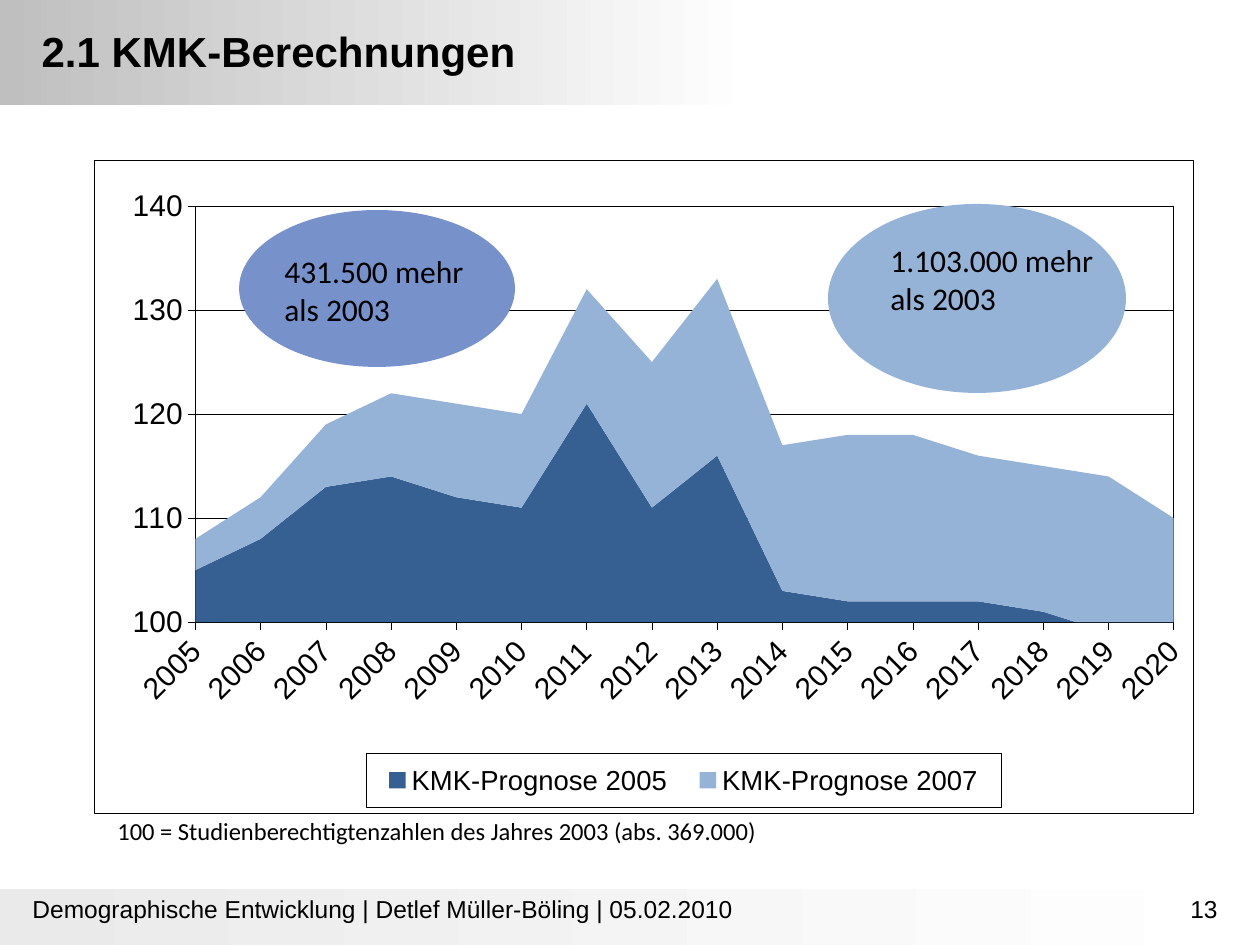
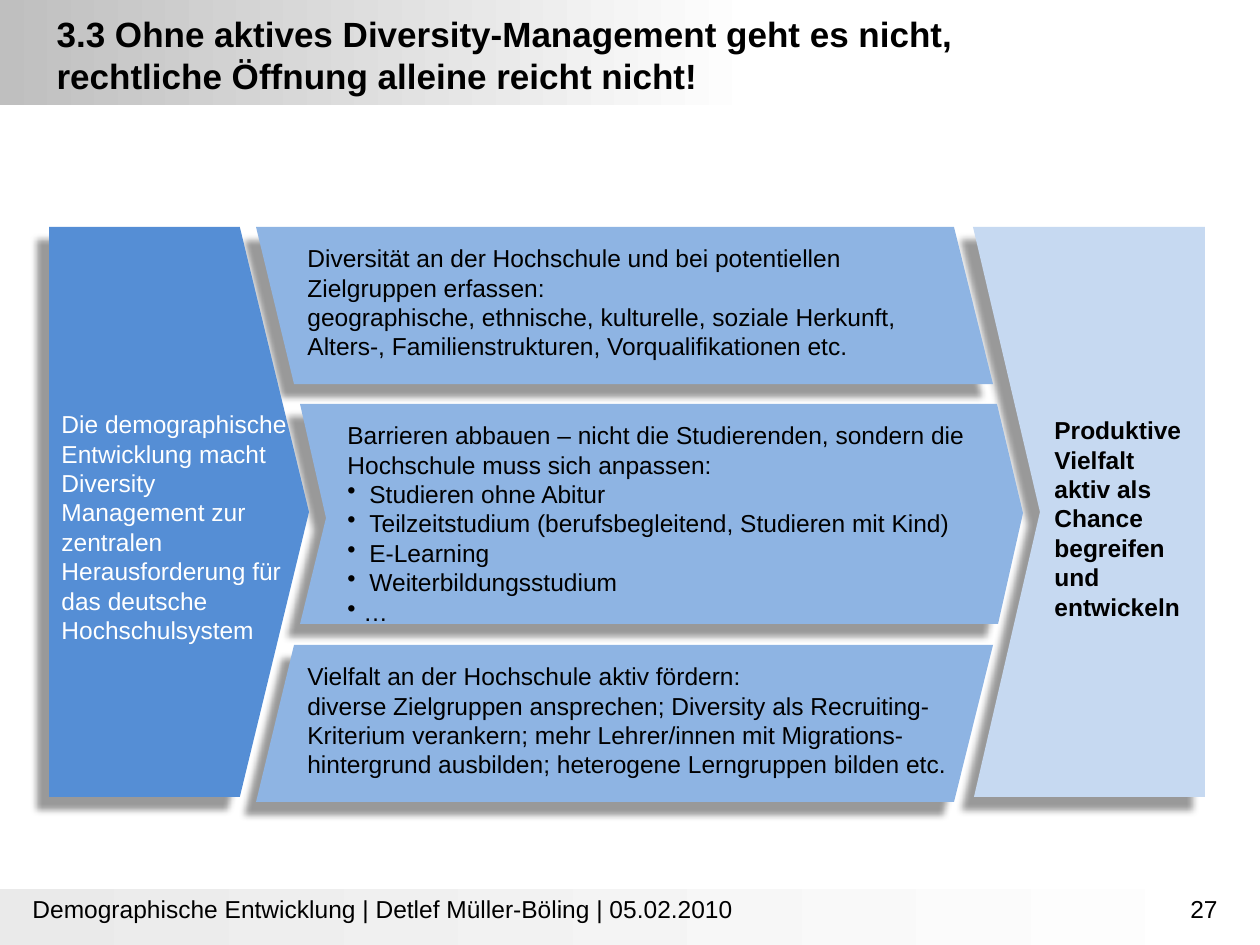
from lxml.etree import SubElement, fromstring
from pptx import Presentation
from pptx.chart.data import CategoryChartData
from pptx.dml.color import RGBColor
from pptx.enum.chart import XL_CHART_TYPE as ChartType
from pptx.enum.chart import XL_LEGEND_POSITION as LegendPosition
from pptx.enum.chart import XL_TICK_MARK as TickMark
from pptx.enum.shapes import MSO_SHAPE as Shape
from pptx.enum.text import MSO_ANCHOR as Anchor
from pptx.enum.text import MSO_AUTO_SIZE as AutoSize
from pptx.enum.text import PP_ALIGN as Align
from pptx.oxml.ns import nsdecls, qn
from pptx.util import Pt

SCALE = 914400 / 126  # EMU per px
WIDTH, HEIGHT = 1260, 945

BLACK = RGBColor(0x00, 0x00, 0x00)
WHITE = RGBColor(0xFF, 0xFF, 0xFF)
BAND_GREY = RGBColor(0xBF, 0xBF, 0xBF)
FOOT_GREY = RGBColor(0xEA, 0xEA, 0xEA)
DARK_BLUE = RGBColor(0x37, 0x60, 0x92)
SOFT_BLUE = RGBColor(0x95, 0xB3, 0xD7)
VIOLET_BLUE = RGBColor(0x77, 0x91, 0xCB)
START_BLUE = RGBColor(0x55, 0x8E, 0xD5)
STEP_BLUE = RGBColor(0x8E, 0xB4, 0xE3)
GOAL_BLUE = RGBColor(0xC6, 0xD9, 0xF1)

# Shared content
FOOTER = "Demographische Entwicklung | Detlef Müller-Böling | 05.02.2010"
BANDS = [  # place, white stop, left colour
    ((0, 0, WIDTH, 105), 0.4, BAND_GREY),
    ((0, 889, WIDTH, 56), 0, FOOT_GREY),
]
BODY = {"name": "Arial", "size": Pt(14), "color": BLACK}
CALIBRI = {"name": "Calibri", "color": BLACK}

# Forecast slide
FORECAST_TITLE = "2.1 KMK-Berechnungen"
YEARS = [str(year) for year in range(2005, 2021)]
FORECASTS = [
    ("KMK-Prognose 2005", DARK_BLUE,
     (105, 108, 113, 114, 112, 111, 121, 111, 116, 103, 102, 102, 102, 101, 99, 96)),
    ("KMK-Prognose 2007", SOFT_BLUE,
     (3, 4, 6, 8, 9, 9, 11, 14, 17, 14, 16, 16, 14, 14, 15, 14)),
]
CHART_PLACE = (94, 160, 1100, 654)
PLOT_PLACE = (0.092, 0.07, 0.89, 0.637)
LEGEND_PLACE = (0.247, 0.907, 0.578, 0.084)
BASE_NOTE = "100 = Studienberechtigtenzahlen des Jahres 2003 (abs. 369.000)"
CALLOUTS = [  # oval, colour, line width, text place, text
    ((243, 214, 268, 149), VIOLET_BLUE, 4.5, (272, 246, 228, 88), "431.500 mehr als 2003"),
    ((828, 204, 298, 189), SOFT_BLUE, 0, (878, 235, 238, 88), "1.103.000 mehr als 2003"),
]

# Diversity slide
DIVERSITY_TITLE = ("3.3 Ohne aktives Diversity-Management geht es nicht, "
                   "rechtliche Öffnung alleine reicht nicht!")
START_PLACE = (49, 227, 260, 570)
GOAL = [(973, 227), (1040, 512), (974, 797), (1205, 797), (1205, 227)]
FIRST_STEP = [(256, 227), (294, 384), (993, 384), (954, 227)]
MIDDLE_STEP = [(300, 404), (326, 518), (300, 624), (998, 624), (1023, 513), (997, 404)]
LAST_STEP = [(x, 227 + 802 - y) for x, y in FIRST_STEP]
OUTLINES = [(GOAL, GOAL_BLUE), (LAST_STEP, STEP_BLUE),
            (MIDDLE_STEP, STEP_BLUE), (FIRST_STEP, STEP_BLUE)]
DIVERSITY_TEXTS = [  # place, format changes, paragraphs; a pair is (bullet indent, text)
    ((49, 403, 256, 251), {"color": WHITE},
     ["Die demographische Entwicklung macht Diversity Management zur zentralen "
      "Herausforderung für das deutsche Hochschulsystem"]),
    ((295, 237, 659, 131), {},
     ["Diversität an der Hochschule und bei potentiellen Zielgruppen erfassen:",
      "geographische, ethnische, kulturelle, soziale Herkunft, Alters-, "
      "Familienstrukturen, Vorqualifikationen etc."]),
    ((335, 414, 659, 220), {},
     ["Barrieren abbauen – nicht die Studierenden, sondern die Hochschule muss sich anpassen:",
      (22, "Studieren ohne Abitur"),
      (22, "Teilzeitstudium (berufsbegleitend, Studieren mit Kind)"),
      (22, "E-Learning"),
      (22, "Weiterbildungsstudium"),
      (16, "…")]),
    ((1042, 409, 157, 220), {"bold": True},
     ["Produktive Vielfalt aktiv als Chance begreifen und entwickeln"]),
    ((295, 655, 669, 131), {},
     ["Vielfalt an der Hochschule aktiv fördern:",
      "diverse Zielgruppen ansprechen; Diversity als Recruiting-Kriterium verankern; "
      "mehr Lehrer/innen mit Migrations-hintergrund ausbilden; "
      "heterogene Lerngruppen bilden etc."]),
]


# Helpers
def emu(*lengths):
    return [round(length * SCALE) for length in lengths]


def set_font(font, values):
    for key, value in values.items():
        if key == "color":
            font.color.rgb = value
        else:
            setattr(font, key, value)


def write(frame, paragraphs, values, align=Align.LEFT):
    frame.word_wrap = True
    frame.auto_size = AutoSize.NONE
    frame.vertical_anchor = Anchor.TOP
    for index, item in enumerate(paragraphs):
        para = frame.add_paragraph() if index else frame.paragraphs[0]
        if isinstance(item, tuple):
            indent, item = item
            props = para._p.get_or_add_pPr()
            margin, = emu(indent)
            props.set("marL", str(margin))
            props.set("indent", str(-margin))
            SubElement(props, qn("a:buChar")).set("char", "•")
        para.alignment = align
        span = para.add_run()
        span.text = item
        set_font(span.font, values)


def add_text(page, place, paragraphs, values, align=Align.LEFT):
    box = page.shapes.add_textbox(*emu(*place))
    write(box.text_frame, paragraphs, values, align)


def paint(shape, color, line_width=0):
    shape.shadow.inherit = False
    shape.fill.solid()
    shape.fill.fore_color.rgb = color
    if line_width:
        shape.line.color.rgb = color
        shape.line.width = Pt(line_width)
    else:
        shape.line.fill.background()


def cast_shadow(shape):
    effects = shape._element.spPr.find(qn("a:effectLst"))
    effects.append(fromstring(
        f'<a:outerShdw {nsdecls("a")} blurRad="50800" dist="127000" dir="8100000" '
        'algn="tr" rotWithShape="0"><a:srgbClr val="000000"><a:alpha val="40000"/>'
        '</a:srgbClr></a:outerShdw>'))


def add_page(deck, layout, title, place, size, number):
    page = deck.slides.add_slide(layout)
    heading = page.shapes.title
    heading.left, heading.top, heading.width, heading.height = emu(*place)
    write(heading.text_frame, [title], BODY | {"size": Pt(size), "bold": True})
    add_text(page, (936, 888, 294, 66), [number], BODY, Align.RIGHT)
    add_text(page, (20, 888, 863, 66), [FOOTER], BODY)
    return page


def add_bands(page, layout):
    """Draw the gradient bands and hand them to the shared layout."""
    for index, (place, white_stop, color) in enumerate(BANDS):
        band = page.shapes.add_shape(Shape.RECTANGLE, *emu(*place))
        paint(band, WHITE)
        band.fill.gradient()
        band.fill.gradient_angle = 180
        stops = zip(band.fill.gradient_stops, ((white_stop, WHITE), (1, color)))
        for stop, (position, tone) in stops:
            stop.position = position
            stop.color.rgb = tone
        band._element.nvSpPr.cNvPr.id = 100 + index
        layout.shapes._spTree.insert(2 + index, band._element)


# Chart parts
def manual_layout(place, inner=False):
    target = '<c:layoutTarget val="inner"/>' if inner else ""
    modes = "".join(f'<c:{axis}Mode val="edge"/>' for axis in "xy")
    sizes = "".join(f'<c:{key} val="{value}"/>' for key, value in zip("xywh", place))
    return fromstring(f'<c:layout {nsdecls("c")}><c:manualLayout>{target}{modes}{sizes}'
                      '</c:manualLayout></c:layout>')


def frame_format(fill):
    return fromstring(
        f'<c:spPr {nsdecls("c", "a")}>{fill}<a:ln w="4826"><a:solidFill>'
        '<a:srgbClr val="000000"/></a:solidFill></a:ln></c:spPr>')


def replace_layout(parent, layout, index):
    for old in parent.findall(qn("c:layout")):
        parent.remove(old)
    parent.insert(index, layout)


def add_forecast_chart(page):
    data = CategoryChartData(number_format="0")
    data.categories = YEARS
    for name, _, values in FORECASTS:
        data.add_series(name, values)
    chart = page.shapes.add_chart(ChartType.AREA_STACKED, *emu(*CHART_PLACE), data).chart
    chart.has_title = False
    axis_font = BODY | {"size": Pt(17.1)}
    set_font(chart.font, axis_font)
    for series, (_, color, _) in zip(chart.plots[0].series, FORECASTS):
        series.format.fill.solid()
        series.format.fill.fore_color.rgb = color
        series.format.line.fill.background()

    years, values = chart.category_axis, chart.value_axis
    years.has_major_gridlines = False
    values.has_major_gridlines = True
    for key, value in {"minimum_scale": 100, "maximum_scale": 140, "major_unit": 10}.items():
        setattr(values, key, value)
    values.tick_labels.number_format = "0"
    values.tick_labels.number_format_is_linked = False
    values._element.find(qn("c:crossBetween")).set("val", "midCat")
    for axis in (years, values):
        axis.major_tick_mark = TickMark.CROSS
        axis.minor_tick_mark = TickMark.NONE
        set_font(axis.tick_labels.font, axis_font)
    years._element.txPr.bodyPr.set("rot", "-2700000")
    for line in (years.format.line, values.format.line, values.major_gridlines.format.line):
        line.color.rgb = BLACK
        line.width = Pt(0.38)

    chart.has_legend = True
    legend = chart.legend
    legend.position = LegendPosition.BOTTOM
    legend.include_in_layout = False
    set_font(legend.font, BODY | {"size": Pt(15.7)})
    replace_layout(legend._element, manual_layout(LEGEND_PLACE), 1)
    white = '<a:solidFill><a:srgbClr val="FFFFFF"/></a:solidFill>'
    legend._element.find(qn("c:overlay")).addnext(frame_format(white))

    chart_root = chart._chartSpace
    plot_area = chart_root.chart.plotArea
    replace_layout(plot_area, manual_layout(PLOT_PLACE, inner=True), 0)
    plot_area.append(frame_format("<a:noFill/>"))
    chart_root.chart.addnext(frame_format(white))


# Slides
def fill_forecast(page):
    add_forecast_chart(page)
    add_text(page, (105, 810, 1072, 42), [BASE_NOTE], CALIBRI | {"size": Pt(14)})
    for oval_place, color, line_width, text_place, text in CALLOUTS:
        oval = page.shapes.add_shape(Shape.OVAL, *emu(*oval_place))
        paint(oval, color, line_width)
        add_text(page, text_place, [text], CALIBRI | {"size": Pt(18)})


def fill_diversity(page):
    for points, color in OUTLINES:
        builder = page.shapes.build_freeform(*points[0], scale=SCALE)
        builder.add_line_segments(points[1:], close=True)
        outline = builder.convert_to_shape()
        paint(outline, color)
        cast_shadow(outline)
    start = page.shapes.add_shape(Shape.PENTAGON, *emu(*START_PLACE))
    start.adjustments[0] = 0.266
    paint(start, START_BLUE)
    cast_shadow(start)
    for place, changes, paragraphs in DIVERSITY_TEXTS:
        add_text(page, place, paragraphs, BODY | changes)


def main():
    deck = Presentation()
    deck.slide_width, deck.slide_height = emu(WIDTH, HEIGHT)
    layout = deck.slide_layouts[5]
    forecast = add_page(deck, layout, FORECAST_TITLE, (29, 19, 1018, 158), 24, "13")
    add_bands(forecast, layout)
    fill_forecast(forecast)
    diversity = add_page(deck, layout, DIVERSITY_TITLE, (44, 6, 922, 100), 20, "27")
    fill_diversity(diversity)
    deck.save("out.pptx")


if __name__ == "__main__":
    main()
